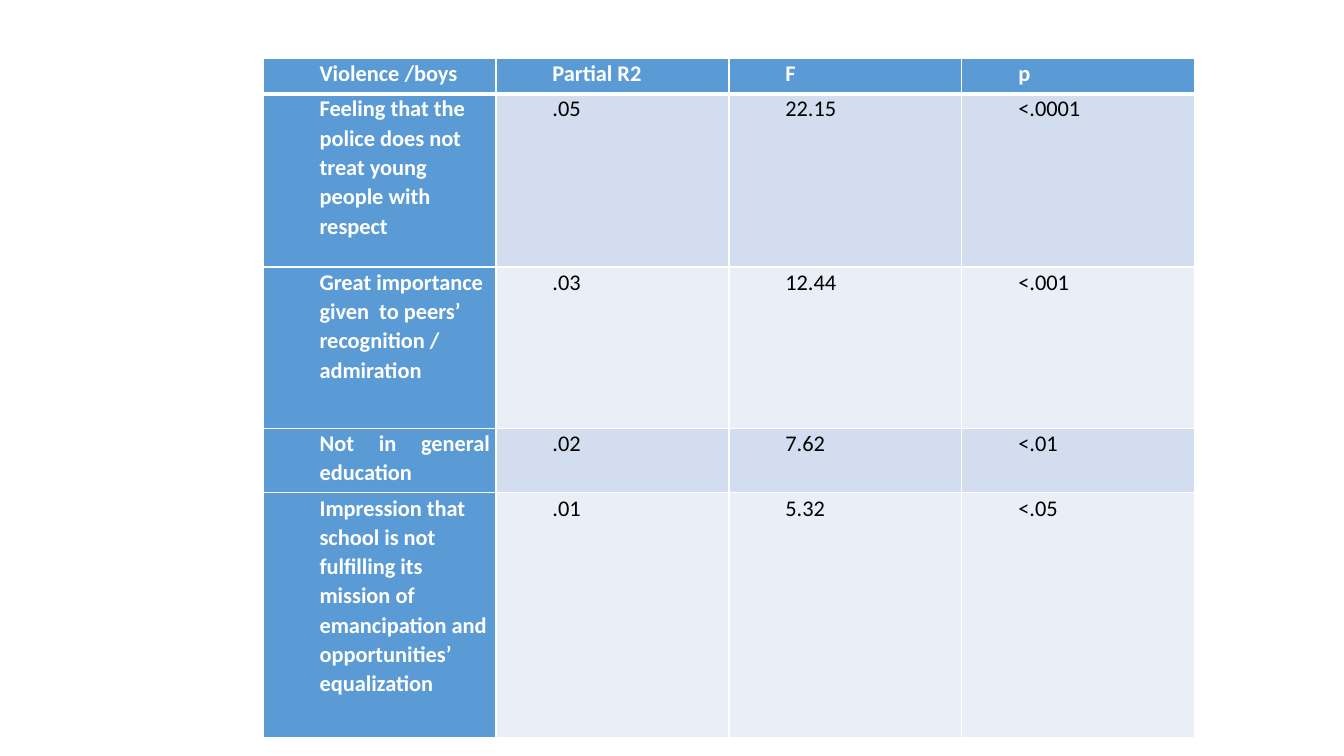
"""Build a slide with a table of predictors of violence among boys."""
from dataclasses import dataclass

from lxml.etree import SubElement
from pptx import Presentation
from pptx.dml.color import RGBColor
from pptx.enum.text import PP_ALIGN
from pptx.oxml.ns import qn
from pptx.table import _Cell
from pptx.util import Inches, Pt

COLORS = {
    "accent": "5B9BD5",
    "band_dark": "D2DEEF",
    "band_light": "EAEFF7",
    "white": "FFFFFF",
    "black": "000000",
}
SLIDE_WIDTH, SLIDE_HEIGHT = Inches(13.33), Inches(7.5)
TABLE_LEFT, TABLE_TOP = Inches(2.61), Inches(0.58)
COLUMN_WIDTH = Inches(2.31)
TEXT_INDENT = Inches(0.5)
SIDE_MARGIN = Inches(0.06)


@dataclass(frozen=True)
class TableRow:
    height: float
    texts: tuple[str, ...]
    label_alignment: PP_ALIGN = PP_ALIGN.LEFT


ROWS = (
    TableRow(0.35, ("Violence /boys", "Partial R2", "F", "p"), PP_ALIGN.JUSTIFY),
    TableRow(1.72, ("Feeling that the police does not treat young people with respect",
                    ".05", "22.15", "<.0001")),
    TableRow(1.6, ("Great importance given  to peers’ recognition / admiration",
                   ".03", "12.44", "<.001")),
    TableRow(0.64, ("Not in general education", ".02", "7.62", "<.01"), PP_ALIGN.JUSTIFY),
    TableRow(2.43, ("Impression that school is not fulfilling its mission of "
                    "emancipation and opportunities’ equalization",
                    ".01", "5.32", "<.05")),
)


def set_borders(cell: _Cell, row_index: int) -> None:
    """Draw white borders, with a thick rule under the header row."""
    widths = {
        "a:lnL": 1,
        "a:lnR": 1,
        "a:lnT": 3 if row_index == 1 else 1,
        "a:lnB": 3 if row_index == 0 else 1,
    }
    properties = cell._tc.get_or_add_tcPr()
    for side, width in widths.items():
        line = SubElement(properties, qn(side), w=str(Pt(width)))
        fill = SubElement(line, qn("a:solidFill"))
        SubElement(fill, qn("a:srgbClr"), val=COLORS["white"])


def format_cell(cell: _Cell, text: str, alignment: PP_ALIGN,
                fill_name: str, row_index: int) -> None:
    """Write and style one table cell."""
    is_heading = fill_name == "accent"
    set_borders(cell, row_index)
    cell.fill.solid()
    cell.fill.fore_color.rgb = RGBColor.from_string(COLORS[fill_name])
    cell.margin_left = cell.margin_right = SIDE_MARGIN
    cell.margin_top = cell.margin_bottom = 0
    cell.text = text
    paragraph = cell.text_frame.paragraphs[0]
    paragraph.alignment = alignment
    paragraph.line_spacing = 1.07
    paragraph_properties = paragraph._p.get_or_add_pPr()
    paragraph_properties.set("marL", str(TEXT_INDENT))
    paragraph_properties.set("indent", "0")
    font = paragraph.font
    font.name, font.size, font.bold = "Calibri", Pt(16), is_heading
    font.color.rgb = RGBColor.from_string(COLORS["white" if is_heading else "black"])


def main() -> None:
    """Create and save the presentation."""
    presentation = Presentation()
    presentation.slide_width, presentation.slide_height = SLIDE_WIDTH, SLIDE_HEIGHT
    slide = presentation.slides.add_slide(presentation.slide_layouts[6])
    column_count = len(ROWS[0].texts)
    table_height = Inches(sum(row.height for row in ROWS))
    table = slide.shapes.add_table(
        len(ROWS), column_count, TABLE_LEFT, TABLE_TOP,
        COLUMN_WIDTH * column_count, table_height,
    ).table
    table.first_col = True
    for row_index, row in enumerate(ROWS):
        table.rows[row_index].height = Inches(row.height)
        band = "band_dark" if row_index % 2 else "band_light"
        for column_index, text in enumerate(row.texts):
            is_heading = row_index == 0 or column_index == 0
            alignment = PP_ALIGN.JUSTIFY if column_index else row.label_alignment
            format_cell(table.cell(row_index, column_index), text, alignment,
                        "accent" if is_heading else band, row_index)
    presentation.save("out.pptx")


if __name__ == "__main__":
    main()
